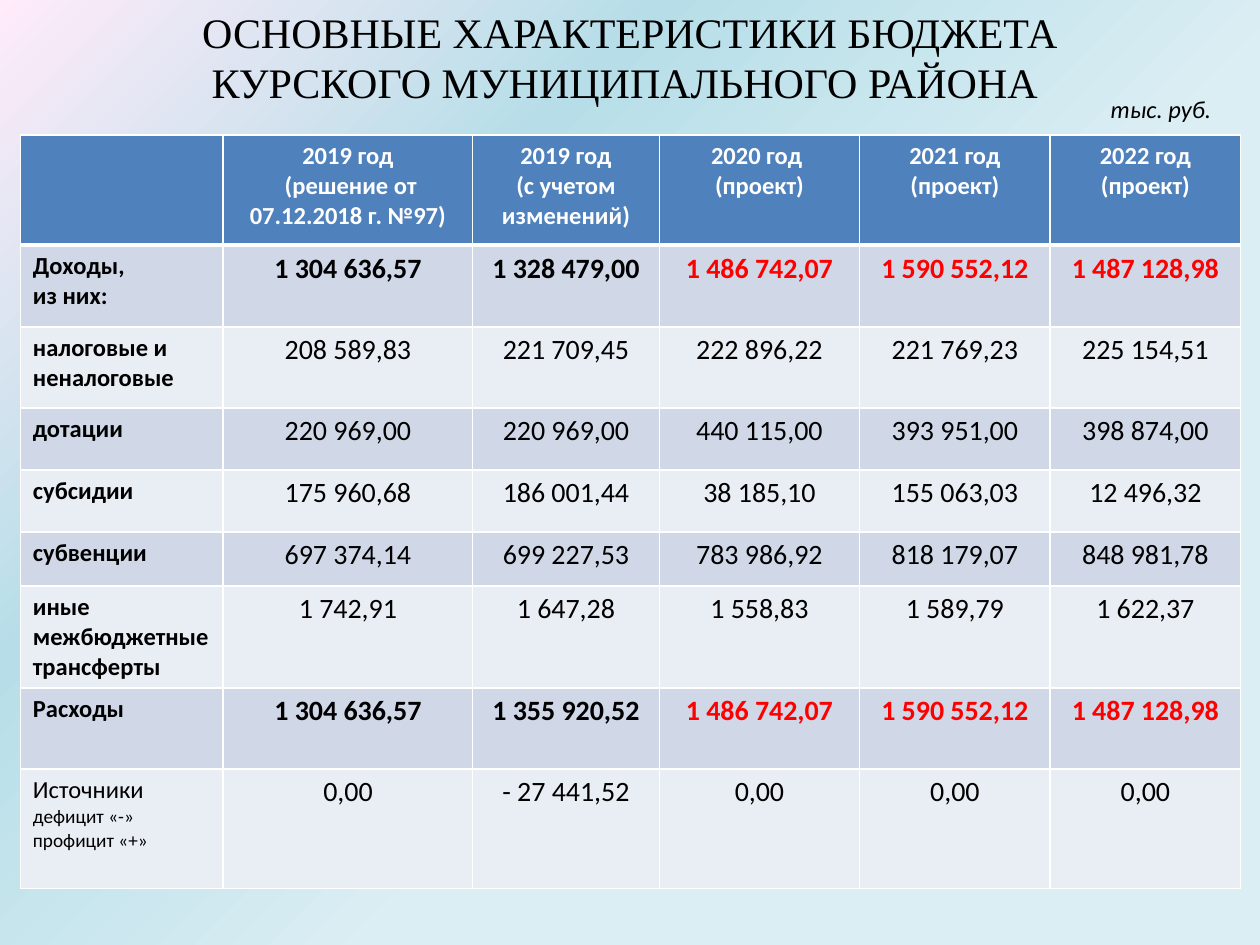
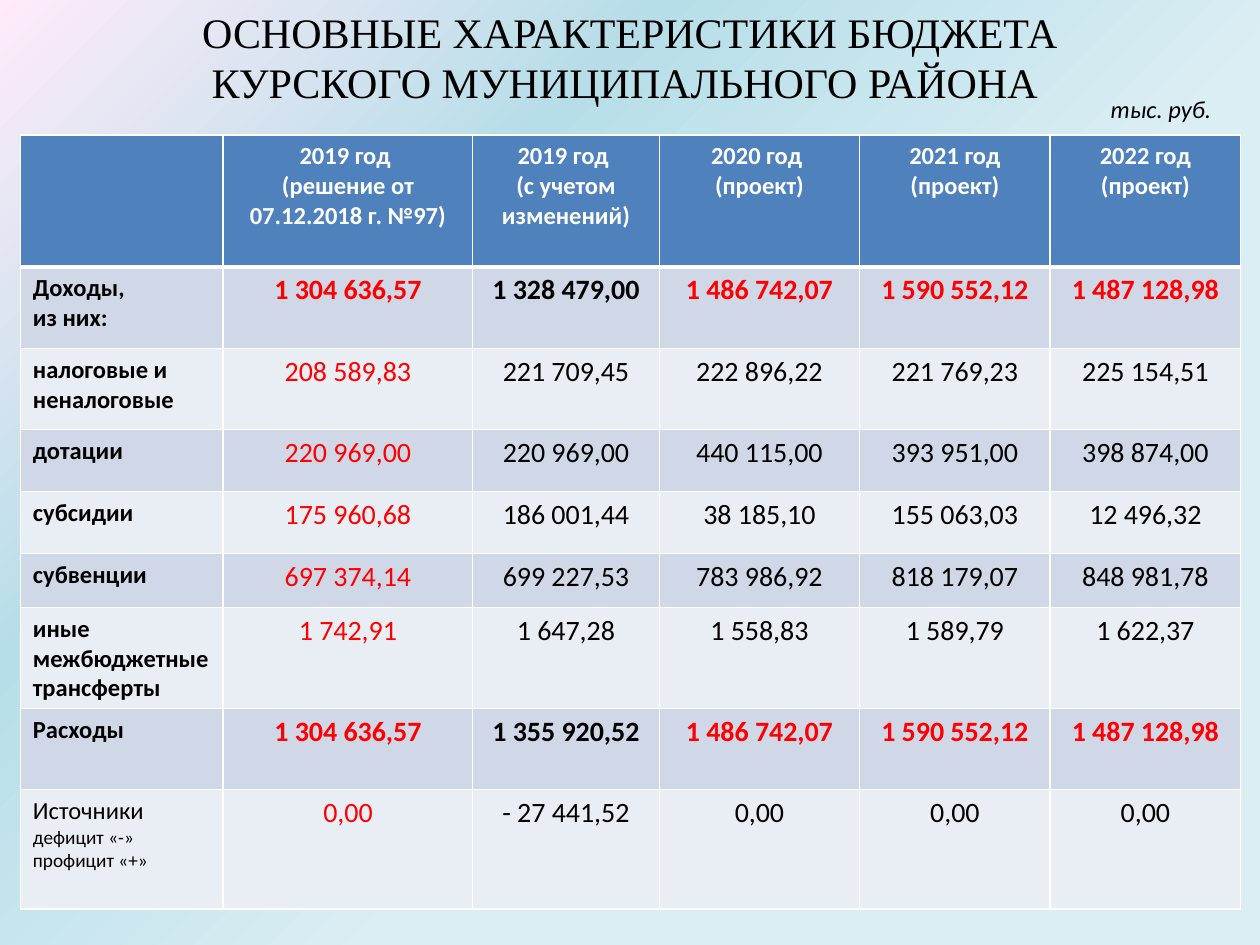
from pptx import Presentation
from pptx.dml.color import RGBColor
from pptx.enum.text import MSO_AUTO_SIZE, PP_ALIGN
from pptx.oxml import parse_xml
from pptx.oxml.ns import nsdecls, qn
from pptx.util import Cm, Pt

BLACK, WHITE, RED = "000000", "FFFFFF", "FF0000"
HEADER_FILL, BAND_FILLS = "4F81BD", ("D0D8E8", "E9EDF4")
BACKDROP = ((0, "DBEEF4"), (40, "DBEEF4"), (70, "B7DEE8"), (100, "FFEBFA"))

TITLE = "ОСНОВНЫЕ ХАРАКТЕРИСТИКИ БЮДЖЕТА КУРСКОГО МУНИЦИПАЛЬНОГО РАЙОНА "
COLUMN_WIDTHS = (4.09, 5.03, 3.76, 4.04, 3.84, 3.84)
ROW_HEIGHTS = (1.65, 1.63, 1.25, 1.25, 1.09, 2.03, 1.63, 2.41)
DRAFT_YEARS = ("2020 год \n(проект)", "2021 год (проект)", "2022 год (проект)")
TOTALS = ("Доходы,\nиз них:", "Расходы")
BALANCE = "Источники |дефицит «-»\nпрофицит «+»"
BUDGET = (
    (TOTALS[0], "1 304 636,57", "1 328 479,00", "1 486 742,07", "1 590 552,12", "1 487 128,98"),
    ("налоговые и неналоговые", "208 589,83", "221 709,45", "222 896,22", "221 769,23", "225 154,51"),
    ("дотации", "220 969,00", "220 969,00", "440 115,00", "393 951,00", "398 874,00"),
    ("субсидии", "175 960,68", "186 001,44", "38 185,10", "155 063,03", "12 496,32"),
    ("субвенции", "697 374,14", "699 227,53", "783 986,92", "818 179,07", "848 981,78"),
    ("иные межбюджетные трансферты", "1 742,91", "1 647,28", "1 558,83", "1 589,79", "1 622,37"),
    (TOTALS[1], "1 304 636,57", "1 355 920,52", "1 486 742,07", "1 590 552,12", "1 487 128,98"),
    (BALANCE, "0,00", "- 27 441,52", "0,00", "0,00", "0,00"),
)


def rgb(value):
    """Turn a hex string into a colour."""
    return RGBColor.from_string(value)


class BudgetDeck:
    """Hold the shared style and the current slide."""

    def __init__(self):
        """Set the slide size and the common backdrop."""
        self.deck = Presentation()
        self.deck.slide_width, self.deck.slide_height = Cm(25.4), Cm(19.05)
        self.slide = None
        self.paint_backdrop()

    def paint_backdrop(self):
        """Give the master a gradient that spreads from the bottom right corner."""
        stops = "".join(
            f'<a:gs pos="{place * 1000}"><a:srgbClr val="{color}"/></a:gs>' for place, color in BACKDROP
        )
        common = self.deck.slide_master.element.cSld
        for plain in common.findall(qn("p:bg")):
            common.remove(plain)
        common.insert(0, parse_xml(
            f'<p:bg {nsdecls("p", "a")}><p:bgPr><a:gradFill rotWithShape="1"><a:gsLst>{stops}</a:gsLst>'
            '<a:path path="circle"><a:fillToRect l="100000" t="100000"/></a:path></a:gradFill>'
            "<a:effectLst/></p:bgPr></p:bg>"
        ))

    def add_slide(self):
        """Start a slide on the blank layout."""
        self.slide = self.deck.slides.add_slide(self.deck.slide_layouts[6])

    def style(self, paragraph, size, color=BLACK, bold=False, italic=False, face="Calibri", centred=True):
        """Set the font and alignment of a paragraph."""
        paragraph.alignment = PP_ALIGN.CENTER if centred else PP_ALIGN.LEFT
        font = paragraph.font
        font.name, font.size, font.bold, font.italic = face, Pt(size), bold, italic
        font.color.rgb = rgb(color)

    def add_caption(self, text, left, top, width, height, size, **look):
        """Add a centred text box."""
        frame = self.slide.shapes.add_textbox(Cm(left), Cm(top), Cm(width), Cm(height)).text_frame
        frame.word_wrap = True
        frame.auto_size = MSO_AUTO_SIZE.SHAPE_TO_FIT_TEXT
        frame.text = text
        self.style(frame.paragraphs[0], size, **look)

    def add_borders(self, cell, top, bottom):
        """Draw white borders with the given top and bottom widths in points."""
        properties = cell._tc.get_or_add_tcPr()
        for place, (side, width) in enumerate((("L", 1), ("R", 1), ("T", top), ("B", bottom))):
            properties.insert(place, parse_xml(
                f'<a:ln{side} {nsdecls("a")} w="{Pt(width)}"><a:solidFill>'
                f'<a:srgbClr val="{WHITE}"/></a:solidFill></a:ln{side}>'
            ))

    def fill_cell(self, cell, text, fill, size, top=1, bottom=1, **look):
        """Write a cell; text after a bar is set smaller."""
        cell.fill.solid()
        cell.fill.fore_color.rgb = rgb(fill)
        self.add_borders(cell, top, bottom)
        main, _, remark = text.partition("|")
        cell.text_frame.text = main
        for paragraph in cell.text_frame.paragraphs:
            self.style(paragraph, size, **look)
        if remark:
            first, second = remark.split("\n")
            explanation = cell.text_frame.paragraphs[0].add_run()
            explanation.text = first
            explanation.font.size = Pt(11)
            continuation = cell.text_frame.add_paragraph()
            continuation.text = second
            self.style(continuation, 11, **look)

    def add_budget(self, headings, header_height, red_columns):
        """Add the budget table; totals of draft years and whole red columns are red."""
        heights = (header_height, *ROW_HEIGHTS)
        table = self.slide.shapes.add_table(
            len(heights), len(COLUMN_WIDTHS), Cm(0.41), Cm(2.72), Cm(sum(COLUMN_WIDTHS)), Cm(sum(heights))
        ).table
        table.first_row = table.horz_banding = False
        for column, width in zip(table.columns, COLUMN_WIDTHS):
            column.width = Cm(width)
        for row, height in zip(table.rows, heights):
            row.height = Cm(height)
        for column, heading in enumerate(("", *headings, *DRAFT_YEARS)):
            self.fill_cell(table.cell(0, column), heading, HEADER_FILL, 14, bottom=3, color=WHITE, bold=True)
        for row, (label, *amounts) in enumerate(BUDGET, 1):
            fill, top = BAND_FILLS[(row - 1) % 2], 3 if row == 1 else 1
            total = label in TOTALS
            self.fill_cell(table.cell(row, 0), label, fill, 14, top, bold=label != BALANCE, centred=False)
            for column, amount in enumerate(amounts, 1):
                red = column in red_columns or (total and column > 2)
                self.fill_cell(
                    table.cell(row, column), amount, fill, 16, top, color=RED if red else BLACK, bold=total
                )


def main():
    """Build both budget slides."""
    budget = BudgetDeck()
    variants = (
        (("2019 год\n (решение от 07.12.2018 г. №97)", "2019 год\n(с учетом изменений)"), 2.22, ()),
        (("2019 год \n(решение от 07.12.2018 г. №97)", "2019 год \n(с учетом изменений)"), 2.66, (1,)),
    )
    for headings, header_height, red_columns in variants:
        budget.add_slide()
        budget.add_budget(headings, header_height, red_columns)
        budget.add_caption(TITLE, 2.9, 0, 19.6, 2.31, 24, face="Times New Roman")
        budget.add_caption("тыс. руб.", 21.41, 1.78, 3.99, 0.86, 14, italic=True)
    budget.deck.save("out.pptx")


if __name__ == "__main__":
    main()
